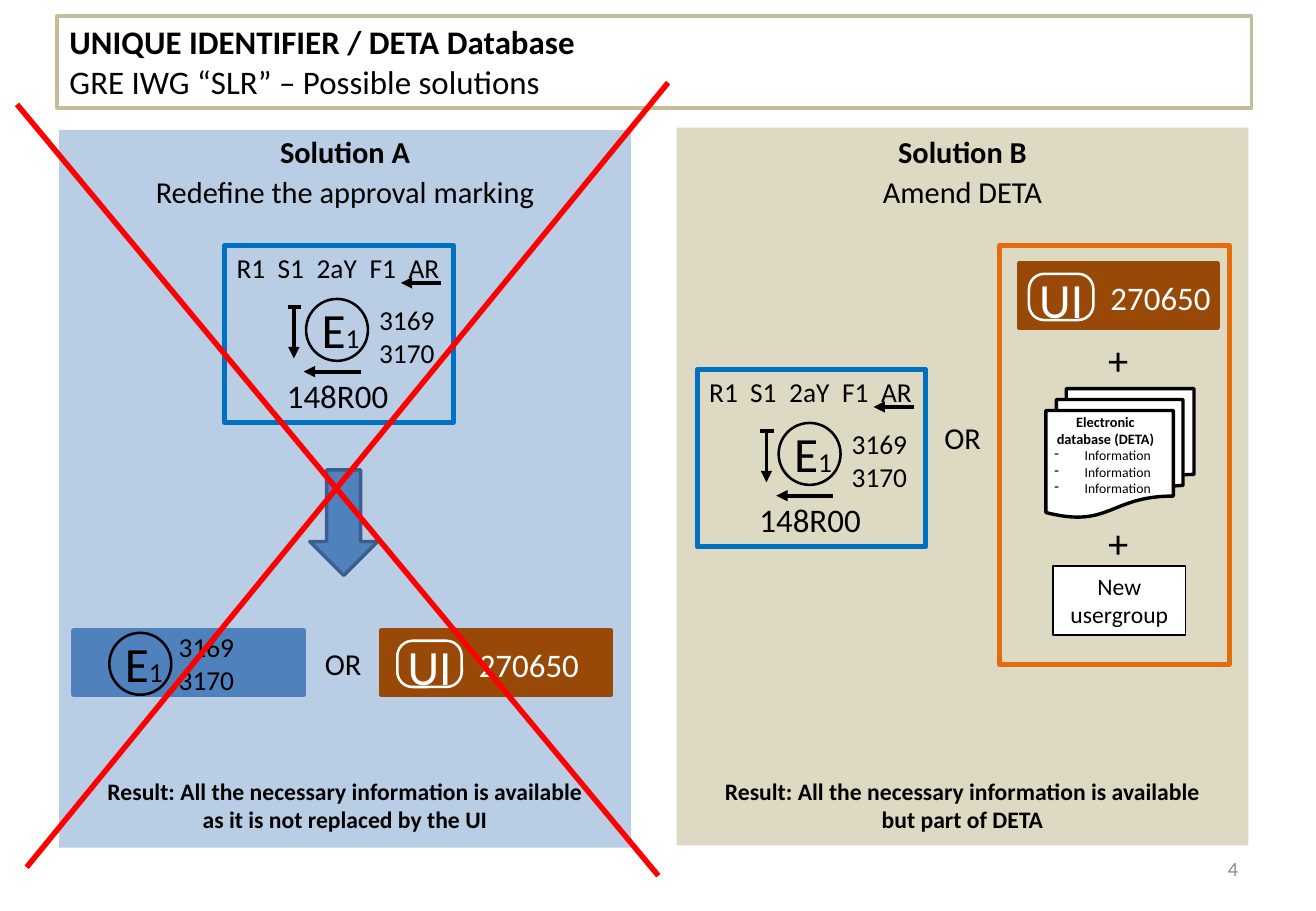
from lxml import etree
from pptx import Presentation
from pptx import util as u
from pptx.dml import color
from pptx.enum import shapes, text
from pptx.oxml import ns

FONT = "Calibri"
BLACK, WHITE, BLUE, BROWN, RED = "000000", "FFFFFF", "4F81BD", "984807", "FF0000"
LEFT, CENTER, RIGHT = text.PP_ALIGN.LEFT, text.PP_ALIGN.CENTER, text.PP_ALIGN.RIGHT
KIND = shapes.MSO_SHAPE

TITLE = ["UNIQUE IDENTIFIER / DETA Database", "GRE IWG “SLR” – Possible solutions"]
RESULT = "Result: All the necessary information is available"
SOLUTIONS = [  # left, top, fill, heading, subtitle, end of the result
    (35, 77, "B9CDE5", "Solution A", "Redefine the approval marking",
     "as it is not replaced by the UI"),
    (401, 75.6, "DDD9C3", "Solution B", "Amend DETA", "but part of DETA"),
]
PANEL_SIZE = (339, 425.5)
LAMPS = ["R1", "S1", "2aY", "F1", "AR"]
LAMP_TABS = [24.3, 47.4, 78.8, 101.9]
APPROVALS = ["3169", "3170"]
MARKINGS = [(133.2, 145.4), (413.3, 218.9)]
MARKING_LINES = [  # from x, y, to x, y, arrow
    (128.2, 22.3, 104.4, 22.3, True),
    (41, 36.7, 41, 67, True),
    (37.4, 36.5, 45.4, 36.5, False),
    (80.6, 74.9, 46.8, 74.9, True),
]
UI_TAGS = [(226.1, 373.7, 136, 9.4), (604.1, 156.2, 117.4, 5.8)]  # left, top, width, inset
WORDS = [("OR", 184.3, 378.7, 18), ("OR", 551.5, 244.8, 18),
         ("+", 643.7, 195.1, 24), ("+", 643.7, 303.8, 24)]
DATABASE = ["Electronic database (DETA)"] + ["Information"] * 3
CROSS = [(10.1, 61.9, 390.2, 519.1), (396, 49, 15.8, 514.1)]

deck = Presentation()
deck.slide_width, deck.slide_height = u.Pt(780), u.Pt(540)
page = deck.slides.add_slide(deck.slide_layouts[5])


def rgb(value):
    return color.RGBColor.from_string(value)


def write(box, lines, size=18, ink=BLACK, bold=False, align=CENTER, wrap=True,
          anchor=text.MSO_ANCHOR.TOP, spacing=None):
    """Fill a box; each line is a string or a list of (string, size) spans."""
    frame = box.text_frame
    frame.word_wrap = wrap
    frame.auto_size = text.MSO_AUTO_SIZE.NONE
    frame.vertical_anchor = anchor
    for index, line in enumerate(lines):
        para = frame.add_paragraph() if index else frame.paragraphs[0]
        para.alignment = align
        if spacing:
            para.line_spacing = u.Pt(spacing)
        for string, span_size in [(line, size)] if isinstance(line, str) else line:
            span = para.add_run()
            span.text = string
            span.font.name, span.font.size = FONT, u.Pt(span_size)
            span.font.bold, span.font.color.rgb = bold, rgb(ink)
    return frame


def label(lines, left, top, width, height, **style):
    box = page.shapes.add_textbox(u.Pt(left), u.Pt(top), u.Pt(width), u.Pt(height))
    return write(box, lines, **style)


def shape(kind, left, top, width, height, fill=None, line=None, weight=3):
    box = page.shapes.add_shape(kind, u.Pt(left), u.Pt(top), u.Pt(width), u.Pt(height))
    box.shadow.inherit = False
    if fill:
        box.fill.solid()
        box.fill.fore_color.rgb = rgb(fill)
    else:
        box.fill.background()
    if line:
        box.line.color.rgb, box.line.width = rgb(line), u.Pt(weight)
    else:
        box.line.fill.background()
    return box


def connect(x1, y1, x2, y2, ink=BLACK, weight=2.25, arrow=False):
    line = page.shapes.add_connector(shapes.MSO_CONNECTOR.STRAIGHT,
                                     u.Pt(x1), u.Pt(y1), u.Pt(x2), u.Pt(y2))
    line.line.color.rgb, line.line.width = rgb(ink), u.Pt(weight)
    if arrow:
        etree.SubElement(line.line._get_or_add_ln(), ns.qn("a:tailEnd"), type="triangle")
    etree.SubElement(line._element.spPr, ns.qn("a:effectLst"))


def approval_mark(left, top):
    """Circled E1."""
    label([[("E", 29.2), ("1", 16.2)]], left + 2.2, top - 3.1, 40.3, 42.5, align=LEFT)
    shape(KIND.OVAL, left, top, 36.7, 36.7, line=BLACK, weight=1.5)


def approval_numbers(left, top):
    label(APPROVALS, left, top, 47.5, 46.8, size=16.2, wrap=False)


def marking(left, top):
    """Complete approval marking in a blue frame."""
    shape(KIND.RECTANGLE, left, top, 135.4, 105.1, line="0070C0")
    lamps = label(["\t".join(LAMPS)], left, top, 136, 26.6, size=16.2, align=LEFT)
    tabs = etree.SubElement(lamps.paragraphs[0]._p.get_or_add_pPr(), ns.qn("a:tabLst"))
    for stop in LAMP_TABS:
        etree.SubElement(tabs, ns.qn("a:tab"), pos=str(int(u.Pt(stop))), algn="l")
    approval_mark(left + 48.2, top + 31.8)
    approval_numbers(left + 84.2, top + 31)
    label(["148R00"], left + 25.9, top + 72.7, 82, 31, size=19.5, spacing=24.4)
    for x1, y1, x2, y2, arrow in MARKING_LINES:
        connect(left + x1, top + y1, left + x2, top + y2, arrow=arrow)


def ui_tag(left, top, width, inset):
    """Unique identifier on a brown bar."""
    shape(KIND.RECTANGLE, left, top, width, 38.2, fill=BROWN, line=BROWN)
    ring = shape(KIND.ROUNDED_RECTANGLE, left + inset, top + 6.1, 38.2, 27.4,
                 fill=BROWN, line=WHITE, weight=1.5)
    ring.adjustments[0] = 0.33
    label(["UI"], left + inset - 4.3, top - 0.3, 46.8, 42.5, size=29.2, ink=WHITE)
    label(["270650"], left + inset + 41.2, top + 5, 85, 31, size=19.5, ink=WHITE, align=LEFT)


title = page.shapes.title
title.left, title.top, title.width, title.height = map(u.Pt, (34, 9.4, 707.8, 54.7))
title.line.color.rgb, title.line.width = rgb("C4BD97"), u.Pt(2.25)
frame = write(title, TITLE, size=19.5, align=LEFT)
frame.paragraphs[0].runs[0].font.bold = True

for left, top, fill, heading, subtitle, ending in SOLUTIONS:
    width, height = PANEL_SIZE
    shape(KIND.RECTANGLE, left, top, width, height, fill=fill)
    label([heading], left, 75.6, width, 28.8, bold=True)
    label([subtitle], left, 99, width, 28.8)
    label([RESULT, ending], left, 456.8, width, 42.5, size=14, bold=True)
label(["4"], 558.7, 500.4, 182.2, 28.8, size=12, ink="8C8C8C", align=RIGHT,
      anchor=text.MSO_ANCHOR.MIDDLE)

for place in MARKINGS:
    marking(*place)
shape(KIND.DOWN_ARROW, 183.6, 278.6, 40.3, 62.6, fill=BLUE, line="3A5F8C", weight=2)
shape(KIND.RECTANGLE, 43.9, 373.7, 136, 38.2, fill=BLUE, line=BLUE)
approval_mark(64.8, 375.1)
approval_numbers(98.6, 370.1)

for tag in UI_TAGS:
    ui_tag(*tag)
for word, left, top, size in WORDS:
    label([word], left, top, 38.2, 36, size=size)

usergroup = shape(KIND.RECTANGLE, 624.2, 335.5, 78.5, 41, fill=WHITE, line=BLACK, weight=0.75)
write(usergroup, ["New usergroup"], size=14)

shape(KIND.FLOWCHART_MULTIDOCUMENT, 619.9, 230.4, 87.8, 76.3, fill=WHITE, line=BLACK, weight=2)
database = label(DATABASE, 617.8, 241.2, 74.9, 57.6, size=8.1)
heading, *items = database.paragraphs
heading.runs[0].font.bold, heading.runs[0].font.size = True, u.Pt(8.5)
for item in items:
    item.alignment = LEFT
    props = item._p.get_or_add_pPr()
    props.set("marL", str(int(u.Pt(18))))
    props.set("indent", str(-int(u.Pt(18))))
    etree.SubElement(props, ns.qn("a:buChar"), char="-")

shape(KIND.RECTANGLE, 592.6, 145.4, 136, 248.4, line="E46C0A")
for ends in CROSS:
    connect(*ends, ink=RED, weight=3.25)

deck.save("out.pptx")
